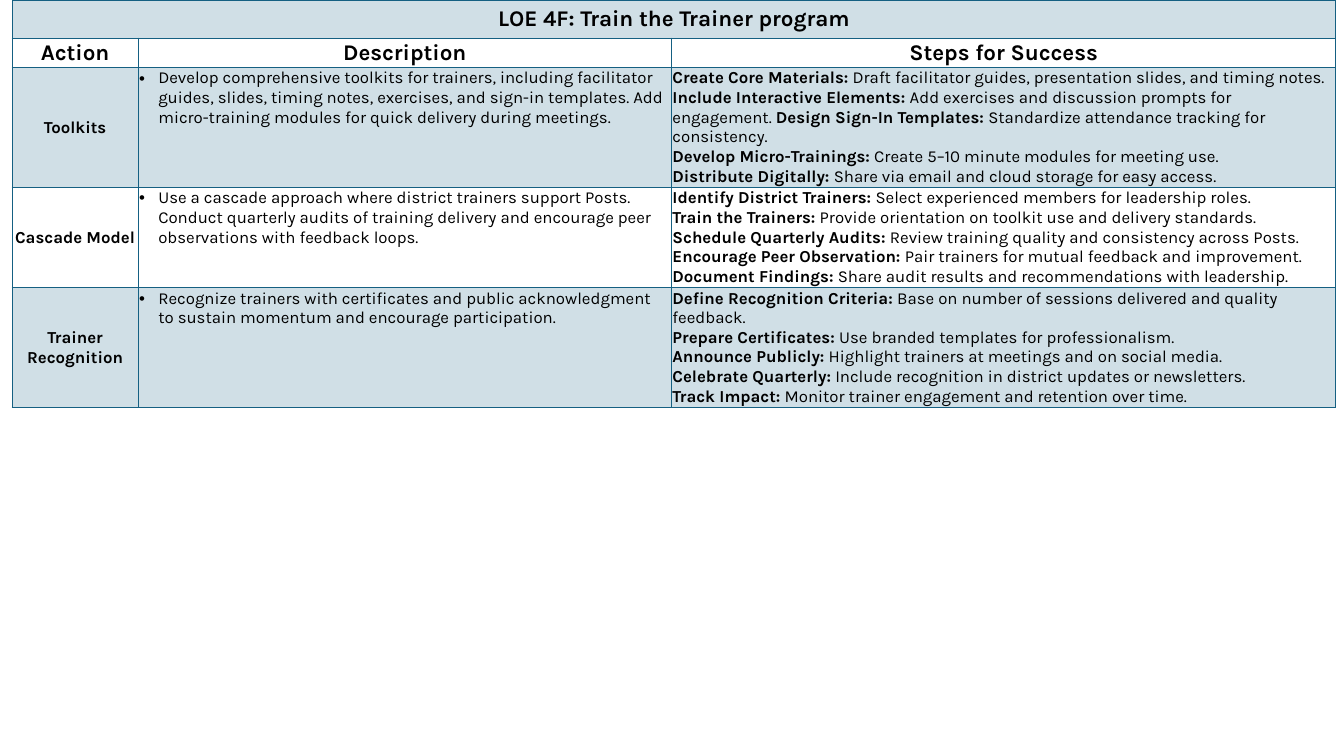
from lxml.etree import SubElement
from pptx import Presentation
from pptx.dml.color import RGBColor
from pptx.enum.text import MSO_ANCHOR, PP_ALIGN
from pptx.oxml import parse_xml
from pptx.oxml.ns import nsdecls, qn
from pptx.util import Inches, Pt

COLORS = {"accent": "156082", "text": "000000"}
COLUMN_WIDTHS = [1.25, 5.29, 6.59]
ROW_HEIGHTS = [0.38, 0.29, 1.14, 0.95, 0.95]

TITLE = "LOE 4F: Train the Trainer program"
HEADINGS = ["Action", "Description", "Steps for Success"]

# Each action: name, description, steps (text between asterisks is bold)
ACTIONS = [
    ("Toolkits",
     "Develop comprehensive toolkits for trainers, including facilitator guides, slides, "
     "timing notes, exercises, and sign-in templates. Add micro-training modules for quick "
     "delivery during meetings.",
     ["*Create Core Materials:* Draft facilitator guides, presentation slides, and timing notes. "
      "*Include Interactive Elements:* Add exercises and discussion prompts for engagement. "
      "*Design Sign-In Templates:* Standardize attendance tracking for consistency.",
      "*Develop Micro-Trainings:* Create 5–10 minute modules for meeting use.",
      "*Distribute Digitally:* Share via email and cloud storage for easy access."]),
    ("Cascade Model",
     "Use a cascade approach where district trainers support Posts. Conduct quarterly audits "
     "of training delivery and encourage peer observations with feedback loops.",
     ["*Identify District Trainers:* Select experienced members for leadership roles.",
      "*Train the Trainers:* Provide orientation on toolkit use and delivery standards.",
      "*Schedule Quarterly Audits:* Review training quality and consistency across Posts.",
      "*Encourage Peer Observation:* Pair trainers for mutual feedback and improvement.",
      "*Document Findings:* Share audit results and recommendations with leadership."]),
    ("Trainer Recognition",
     "Recognize trainers with certificates and public acknowledgment to sustain momentum "
     "and encourage participation.",
     ["*Define Recognition Criteria:* Base on number of sessions delivered and quality feedback.",
      "*Prepare Certificates:* Use branded templates for professionalism.",
      "*Announce Publicly:* Highlight trainers at meetings and on social media.",
      "*Celebrate Quarterly:* Include recognition in district updates or newsletters.",
      "*Track Impact:* Monitor trainer engagement and retention over time."]),
]


class PlanSlide:
    """Holds the slide and the style shared by its elements."""

    font = "Karla"
    inset = Inches(0.01)
    tint = 20

    def __init__(self, presentation):
        self.slide = presentation.slides.add_slide(presentation.slide_layouts[6])

    def grid(self, left, top, widths, heights):
        frame = self.slide.shapes.add_table(
            len(heights), len(widths), Inches(left), Inches(top),
            Inches(sum(widths)), Inches(sum(heights)))
        table = frame.table
        table.first_row = table.horz_banding = False
        for column, width in zip(table.columns, widths):
            column.width = Inches(width)
        for index, (row, height) in enumerate(zip(table.rows, heights)):
            row.height = Inches(height)
            for cell in row.cells:
                self.style_cell(cell, tinted=index % 2 == 0)
        return table

    def style_cell(self, cell, tinted):
        cell.margin_left = cell.margin_right = self.inset
        cell.margin_top = cell.margin_bottom = self.inset
        properties = cell._tc.get_or_add_tcPr()
        if tinted:
            cell.fill.solid()
            cell.fill.fore_color.rgb = RGBColor.from_string(COLORS["accent"])
            color = properties.find(".//" + qn("a:srgbClr"))
            SubElement(color, qn("a:alpha"), val=str(self.tint * 1000))
        else:
            cell.fill.background()
        for position, side in enumerate(("lnL", "lnR", "lnT", "lnB")):
            properties.insert(position, parse_xml(
                f'<a:{side} {nsdecls("a")} w="{Pt(1)}"><a:solidFill>'
                f'<a:srgbClr val="{COLORS["accent"]}"/></a:solidFill></a:{side}>'))

    def format_run(self, run, size, bold):
        run.font.name = self.font
        run.font.size = Pt(size)
        run.font.bold = bold
        run.font.color.rgb = RGBColor.from_string(COLORS["text"])

    def label(self, cell, text, size):
        cell.vertical_anchor = MSO_ANCHOR.MIDDLE
        cell.text_frame.text = text
        paragraph = cell.text_frame.paragraphs[0]
        paragraph.alignment = PP_ALIGN.CENTER
        self.format_run(paragraph.runs[0], size, True)

    def bullet(self, cell, text):
        cell.text_frame.text = text
        paragraph = cell.text_frame.paragraphs[0]
        properties = paragraph._p.get_or_add_pPr()
        properties.set("marL", str(Inches(0.19)))
        properties.set("indent", str(-Inches(0.19)))
        SubElement(properties, qn("a:buFont"), typeface="Arial")
        SubElement(properties, qn("a:buChar"), char="•")
        self.format_run(paragraph.runs[0], 12, False)

    def steps(self, cell, lines):
        frame = cell.text_frame
        for index, line in enumerate(lines):
            paragraph = frame.add_paragraph() if index else frame.paragraphs[0]
            for part, text in enumerate(line.split("*")):
                if text:
                    run = paragraph.add_run()
                    run.text = text
                    self.format_run(run, 12, part % 2 == 1)


def main():
    presentation = Presentation()
    presentation.slide_width = Inches(13.33)
    presentation.slide_height = Inches(7.5)
    plan = PlanSlide(presentation)
    table = plan.grid(0.12, 0, COLUMN_WIDTHS, ROW_HEIGHTS)

    # Title and column headings
    table.cell(0, 0).merge(table.cell(0, 2))
    plan.label(table.cell(0, 0), TITLE, 16)
    for column, heading in enumerate(HEADINGS):
        plan.label(table.cell(1, column), heading, 16)

    # Actions
    for row, (action, description, steps) in enumerate(ACTIONS, start=2):
        plan.label(table.cell(row, 0), action, 12)
        plan.bullet(table.cell(row, 1), description)
        plan.steps(table.cell(row, 2), steps)

    presentation.save("out.pptx")


if __name__ == "__main__":
    main()
